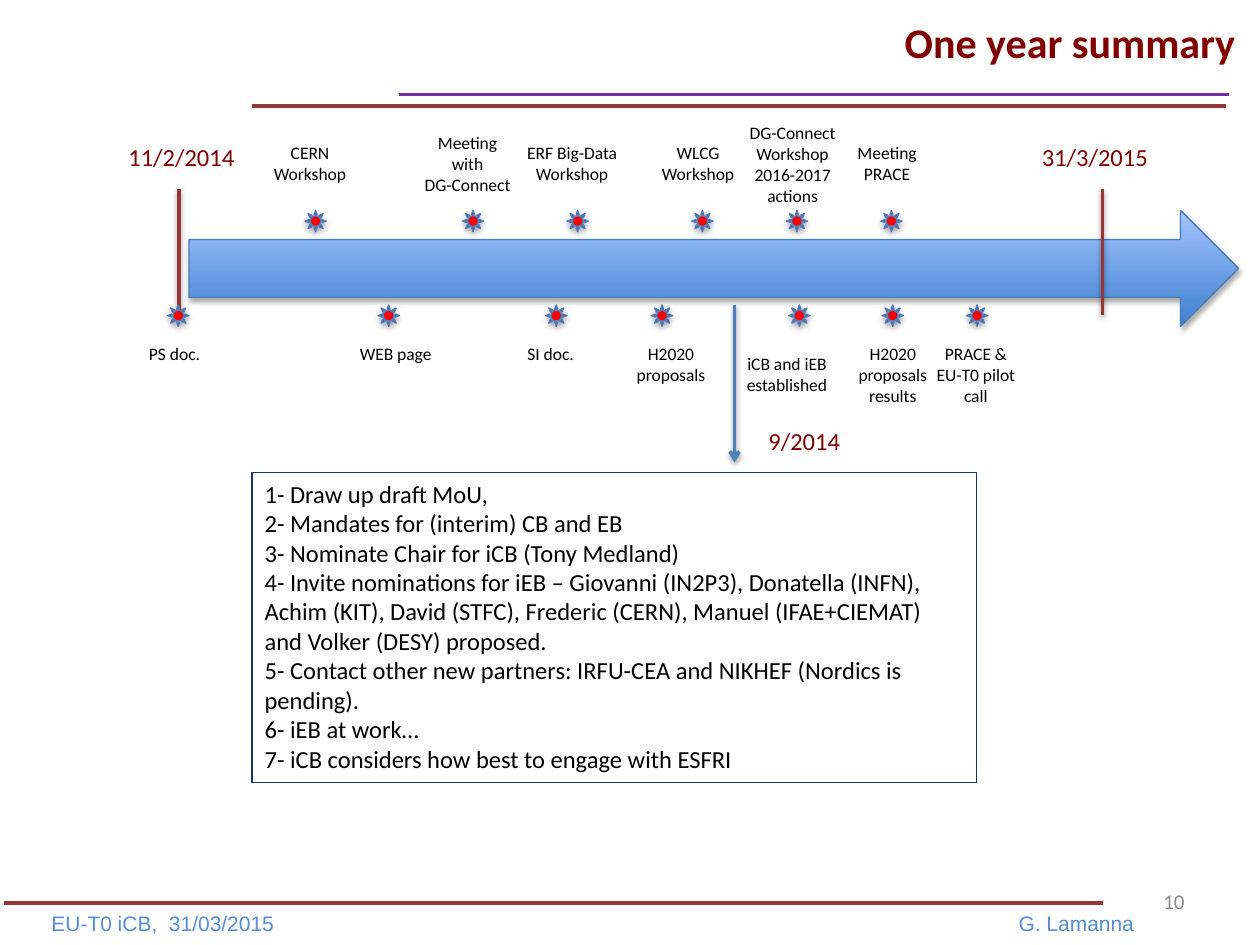
from dataclasses import dataclass

from lxml import etree
from pptx import Presentation
from pptx.dml.color import RGBColor
from pptx.enum.shapes import MSO_CONNECTOR, MSO_SHAPE
from pptx.enum.text import MSO_ANCHOR, MSO_AUTO_SIZE, PP_ALIGN
from pptx.oxml.ns import qn
from pptx.util import Inches, Pt

STRAIGHT = MSO_CONNECTOR.STRAIGHT
ARROW, SUN = MSO_SHAPE.RIGHT_ARROW, MSO_SHAPE.SUN
LEFT, CENTER, RIGHT = PP_ALIGN.LEFT, PP_ALIGN.CENTER, PP_ALIGN.RIGHT
TOP, MIDDLE = MSO_ANCHOR.TOP, MSO_ANCHOR.MIDDLE
FIXED = MSO_AUTO_SIZE.NONE

RED, BRICK, PURPLE, BLACK = "800000", "953735", "7030A0", "000000"
EDGE, SKY, GRAY = "4B7EBC", "558ED5", "8C8C8C"
ABOVE, BELOW, SPOT = 1.67, 2.42, 0.17


@dataclass
class Label:
    left: float
    top: float
    width: float
    height: float
    text: str
    size: int = 10
    color: str = BLACK
    align: PP_ALIGN = CENTER
    wrap: bool = True
    font: str = "Calibri"
    bold: bool = False
    anchor: MSO_ANCHOR = TOP


@dataclass
class Event:
    left: float
    top: float
    label: Label


@dataclass
class Rule:
    x1: float
    y1: float
    x2: float
    y2: float
    color: str
    width: float
    shadow: bool = False
    arrow: bool = False


EVENTS = [
    Event(2.42, ABOVE, Label(2, 1.08, 0.92, 0.44, "CERN Workshop")),
    Event(3.67, ABOVE, Label(3.25, 1, 0.92, 0.61, "Meeting with\nDG-Connect")),
    Event(4.5, ABOVE, Label(4.08, 1.08, 0.92, 0.44, "ERF Big-Data Workshop")),
    Event(5.49, ABOVE, Label(5.08, 1.08, 0.92, 0.44, "WLCG\nWorkshop")),
    Event(6.24, ABOVE, Label(5.83, 0.92, 0.92, 0.77,
                             "DG-Connect\nWorkshop\n2016-2017\nactions")),
    Event(6.99, ABOVE, Label(6.58, 1.08, 0.92, 0.44, "Meeting PRACE")),
    Event(1.33, BELOW, Label(1.08, 2.67, 0.61, 0.27, "PS doc.", wrap=False)),
    Event(3, BELOW, Label(2.75, 2.67, 0.78, 0.27, "WEB page", wrap=False)),
    Event(4.33, BELOW, Label(4.08, 2.67, 0.58, 0.27, "SI doc.", wrap=False)),
    Event(5.17, BELOW, Label(4.83, 2.67, 0.99, 0.44, "H2020 proposals")),
    Event(6.26, BELOW, Label(5.75, 2.75, 0.99, 0.44, "iCB and iEB established")),
    Event(7, BELOW, Label(6.59, 2.67, 0.99, 0.61, "H2020 proposals\nresults")),
    Event(7.67, BELOW, Label(7.33, 2.67, 0.83, 0.61, "PRACE & EU-T0 pilot call")),
]

FRAME = [
    Rule(2, 0.84, 9.73, 0.84, BRICK, 2.25),
    Rule(0.03, 7.17, 8.75, 7.17, BRICK, 2.25),
    Rule(3.17, 0.75, 9.75, 0.75, PURPLE, 2.25),
]

MARKS = [
    Rule(1.42, 1.5, 1.42, 2.5, BRICK, 2, shadow=True),
    Rule(8.75, 1.5, 8.75, 2.5, BRICK, 2, shadow=True),
    Rule(5.83, 2.42, 5.83, 3.67, "4F81BD", 2, shadow=True, arrow=True),
]

NOTES = [
    Label(0.92, 1.08, 1.05, 0.34, "11/2/2014", 14, RED, LEFT, False),
    Label(8.17, 1.08, 1.05, 0.34, "31/3/2015", 14, RED, LEFT, False),
    Label(6, 3.33, 0.78, 0.34, "9/2014", 14, RED, LEFT, False),
    Label(0.31, 7.18, 3, 0.3, "EU-T0 iCB,  31/03/2015", 12, SKY, LEFT, font="Arial"),
    Label(7.1, 7.18, 2, 0.3, "G. Lamanna", 12, SKY, RIGHT, font="Arial"),
    Label(7.17, 6.95, 2.33, 0.4, "10", 12, GRAY, RIGHT, anchor=MIDDLE),
]

TITLE = Label(7.08, 0.08, 2.85, 0.5, "One year summary", 24, RED, LEFT, False, bold=True)

TASKS = Label(2, 3.75, 5.75, 2.46, "\n".join([
    "1- Draw up draft MoU,",
    "2- Mandates for (interim) CB and EB",
    "3- Nominate Chair for iCB (Tony Medland)",
    "4- Invite nominations for iEB – Giovanni (IN2P3), Donatella (INFN), "
    "Achim (KIT), David (STFC), Frederic (CERN), Manuel (IFAE+CIEMAT) "
    "and Volker (DESY) proposed.",
    "5- Contact other new partners: IRFU-CEA and NIKHEF (Nordics is pending).",
    "6- iEB at work…",
    "7- iCB considers how best to engage with ESFRI",
]), 14, align=LEFT)


def paint(hue: str) -> RGBColor:
    return RGBColor.from_string(hue)


def shade(shape, alpha: int, gap: float) -> None:
    props = shape._element.spPr
    effects = props.find(qn("a:effectLst"))
    if effects is None:
        effects = etree.SubElement(props, qn("a:effectLst"))
    if alpha:
        outer = etree.SubElement(effects, qn("a:outerShdw"), blurRad=str(Pt(3.1)),
                                 dist=str(Pt(gap)), dir="5400000", rotWithShape="0")
        tint = etree.SubElement(outer, qn("a:srgbClr"), val=BLACK)
        etree.SubElement(tint, qn("a:alpha"), val=str(alpha * 1000))


def write(shape, label: Label) -> None:
    shape.left, shape.top = Inches(label.left), Inches(label.top)
    shape.width, shape.height = Inches(label.width), Inches(label.height)
    frame = shape.text_frame
    frame.text = label.text
    frame.word_wrap = label.wrap
    frame.auto_size = FIXED
    frame.vertical_anchor = label.anchor
    for para in frame.paragraphs:
        para.alignment = label.align
        para.space_before = Pt(0)
        for run in para.runs:
            run.font.name = label.font
            run.font.size = Pt(label.size)
            run.font.bold = label.bold
            run.font.color.rgb = paint(label.color)


def add_label(slide, label: Label) -> None:
    write(slide.shapes.add_textbox(0, 0, 0, 0), label)


def add_rule(slide, rule: Rule) -> None:
    line = slide.shapes.add_connector(STRAIGHT, Inches(rule.x1), Inches(rule.y1),
                                      Inches(rule.x2), Inches(rule.y2))
    line.line.color.rgb = paint(rule.color)
    line.line.width = Pt(rule.width)
    if rule.arrow:
        etree.SubElement(line._element.spPr.find(qn("a:ln")), qn("a:tailEnd"), type="arrow")
    shade(line, 38 if rule.shadow else 0, 1.6)


def add_form(slide, kind: MSO_SHAPE, left: float, top: float, width: float, height: float):
    form = slide.shapes.add_shape(kind, Inches(left), Inches(top),
                                  Inches(width), Inches(height))
    form.line.color.rgb = paint(EDGE)
    form.line.width = Pt(0.75)
    form.shadow.inherit = False
    shade(form, 35, 1.8)
    return form


def add_event(slide, event: Event) -> None:
    spot = add_form(slide, SUN, event.left, event.top, SPOT, SPOT)
    spot.fill.solid()
    spot.fill.fore_color.rgb = paint("FF0000")
    add_label(slide, event.label)


def add_tasks(body) -> None:
    write(body, TASKS)
    body.line.color.rgb = paint("17375E")
    body.line.width = Pt(0.75)
    for para in body.text_frame.paragraphs:
        props = para._p.get_or_add_pPr()
        props.set("marL", "0")
        props.set("indent", "0")
        etree.SubElement(props, qn("a:buNone"))


def main() -> None:
    deck = Presentation()
    deck.slide_width, deck.slide_height = Inches(10), Inches(7.5)
    slide = deck.slides.add_slide(deck.slide_layouts[1])
    write(slide.shapes.title, TITLE)
    add_tasks(slide.placeholders[1])
    for rule in FRAME:
        add_rule(slide, rule)
    span = add_form(slide, ARROW, 1.5, 1.67, 8.33, 0.92)
    span.fill.gradient()
    span.fill.gradient_angle = 90
    for stop, hue in zip(span.fill.gradient_stops, ("3F80CE", "A4C4FF")):
        stop.color.rgb = paint(hue)
    for rule in MARKS:
        add_rule(slide, rule)
    for event in EVENTS:
        add_event(slide, event)
    for note in NOTES:
        add_label(slide, note)
    deck.save("out.pptx")


if __name__ == "__main__":
    main()
